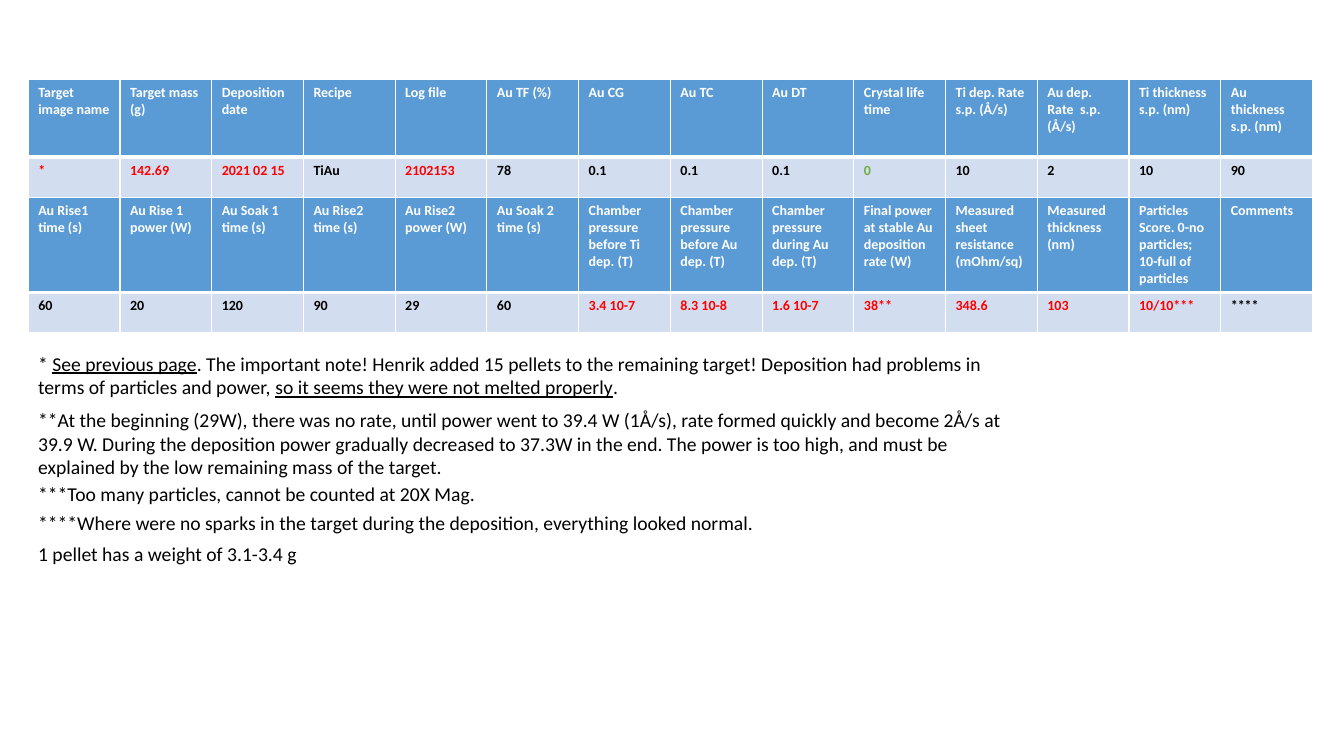
from lxml.etree import SubElement
from pptx import Presentation
from pptx.dml.color import RGBColor
from pptx.enum.text import MSO_AUTO_SIZE as AutoSize
from pptx.oxml import parse_xml
from pptx.oxml.ns import nsdecls, qn
from pptx.util import Pt

PX = 9144
FONT = "Calibri"
WHITE = RGBColor(0xFF, 0xFF, 0xFF)
BLACK = RGBColor(0x00, 0x00, 0x00)
RED = RGBColor(0xFF, 0x00, 0x00)
GREEN = RGBColor(0x70, 0xAD, 0x47)
HEADER_BLUE = RGBColor(0x5B, 0x9B, 0xD5)
VALUE_BLUE = RGBColor(0xD2, 0xDE, 0xEF)

LEFT = 28
COLUMN = 91
NOTE_WIDTH = 1003

SETTINGS = [
    ("Target image name", "*", RED),
    ("Target mass (g)", "142.69", RED),
    ("Deposition date", "2021 02 15", RED),
    ("Recipe", "TiAu", BLACK),
    ("Log file", "2102153", RED),
    ("Au TF (%)", "78", BLACK),
    ("Au CG", "0.1", BLACK),
    ("Au TC", "0.1", BLACK),
    ("Au DT", "0.1", BLACK),
    ("Crystal life time", "0", GREEN),
    ("Ti dep. Rate s.p. (Å/s)", "10", BLACK),
    ("Au dep. Rate  s.p. (Å/s)", "2", BLACK),
    ("Ti thickness s.p. (nm)", "10", BLACK),
    ("Au thickness s.p. (nm)", "90", BLACK),
]
RESULTS = [
    ("Au Rise1 time (s)", "60", BLACK),
    ("Au Rise 1 power (W)", "20", BLACK),
    ("Au Soak 1 time (s)", "120", BLACK),
    ("Au Rise2 time (s)", "90", BLACK),
    ("Au Rise2 power (W)", "29", BLACK),
    ("Au Soak 2 time (s)", "60", BLACK),
    ("Chamber pressure before Ti dep. (T)", "3.4 10-7", RED),
    ("Chamber pressure before Au dep. (T)", "8.3 10-8", RED),
    ("Chamber pressure during Au dep. (T)", "1.6 10-7", RED),
    ("Final power at stable Au deposition rate (W)", "38**", RED),
    ("Measured sheet resistance (mOhm/sq)", "348.6", RED),
    ("Measured thickness (nm)", "103", RED),
    ("Particles\nScore. 0-no particles; 10-full of particles", "10/10***", RED),
    ("Comments", "****", BLACK),
]
TARGET_NOTE = [
    ("* ", False),
    ("See previous page", True),
    (". The important note! Henrik added 15 pellets to the remaining target! "
     "Deposition had problems in terms of particles and power, ", False),
    ("so it seems they were not melted properly", True),
    (".", False),
]
POWER_NOTE = (
    "**At the beginning (29W), there was no rate, until power went to 39.4 W (1Å/s), "
    "rate formed quickly and become 2Å/s at 39.9 W. During the deposition power "
    "gradually decreased to 37.3W in the end. The power is too high, and must be "
    "explained by the low remaining mass of the target."
)
PARTICLE_NOTE = "***Too many particles, cannot be counted at 20X Mag."
SPARK_NOTE = ("****Where were no sparks in the target during the deposition, "
              "everything looked normal.")
PELLET_NOTE = "1 pellet has a weight of 3.1-3.4 g"


def add_text(paragraph, text, size=14, color=BLACK, bold=False, underline=False):
    run = paragraph.add_run()
    run.text = text
    font = run.font
    font.name, font.size, font.bold = FONT, Pt(size), bold
    font.color.rgb = color
    if underline:
        font.underline = True


def set_borders(cell, top, bottom):
    properties = cell._tc.get_or_add_tcPr()
    widths = {"lnL": 1, "lnR": 1, "lnT": top, "lnB": bottom}
    for position, (side, width) in enumerate(widths.items()):
        border = parse_xml(f'<a:{side} {nsdecls("a")} w="{Pt(width)}"/>')
        solid = SubElement(border, qn("a:solidFill"))
        SubElement(solid, qn("a:srgbClr"), val=str(WHITE))
        properties.insert(position, border)


def fill_cell(cell, text, color, background, top, bottom):
    cell.fill.solid()
    cell.fill.fore_color.rgb = background
    set_borders(cell, top, bottom)
    frame = cell.text_frame
    for index, line in enumerate(text.split("\n")):
        paragraph = frame.add_paragraph() if index else frame.paragraphs[0]
        add_text(paragraph, line, size=10, color=color, bold=True)


def add_log_table(slide, entries, left, top, row_heights):
    table = slide.shapes.add_table(
        2, len(entries), left * PX, top * PX,
        len(entries) * COLUMN * PX, sum(row_heights) * PX).table
    for row, height in zip(table.rows, row_heights):
        row.height = height * PX
    for index, (heading, value, color) in enumerate(entries):
        table.columns[index].width = COLUMN * PX
        fill_cell(table.cell(0, index), heading, WHITE, HEADER_BLUE, 1, 3)
        fill_cell(table.cell(1, index), value, color, VALUE_BLUE, 3, 1)


def add_note(slide, pieces, left, top, width, height, wrap=True):
    frame = slide.shapes.add_textbox(
        left * PX, top * PX, width * PX, height * PX).text_frame
    frame.word_wrap = wrap
    frame.auto_size = AutoSize.SHAPE_TO_FIT_TEXT
    for text, underline in pieces:
        add_text(frame.paragraphs[0], text, underline=underline)


def add_notes(slide, left, width):
    add_note(slide, TARGET_NOTE, left, 344, width, 57)
    for text, top, height in ((POWER_NOTE, 400, 81),
                              (PARTICLE_NOTE, 473, 34),
                              (SPARK_NOTE, 502, 34)):
        add_note(slide, [(text, False)], left, top, width, height)
    add_note(slide, [(PELLET_NOTE, False)], left, 533, 284, 34, wrap=False)


def main():
    deck = Presentation()
    deck.slide_width, deck.slide_height = 1333 * PX, 750 * PX
    slide = deck.slides.add_slide(deck.slide_layouts[6])
    add_log_table(slide, SETTINGS, LEFT, 79, (77, 40))
    add_log_table(slide, RESULTS, LEFT, 196, (94, 40))
    add_notes(slide, LEFT, NOTE_WIDTH)
    deck.save("out.pptx")


if __name__ == "__main__":
    main()
